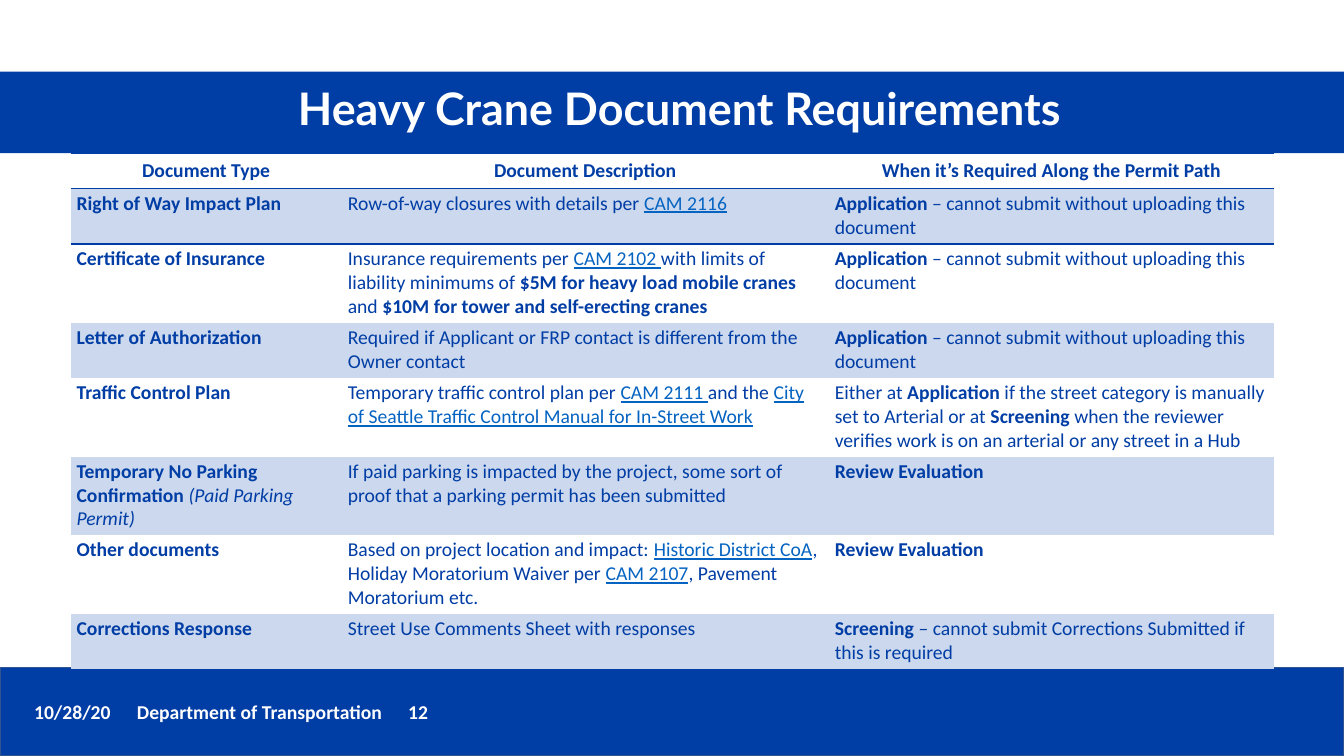
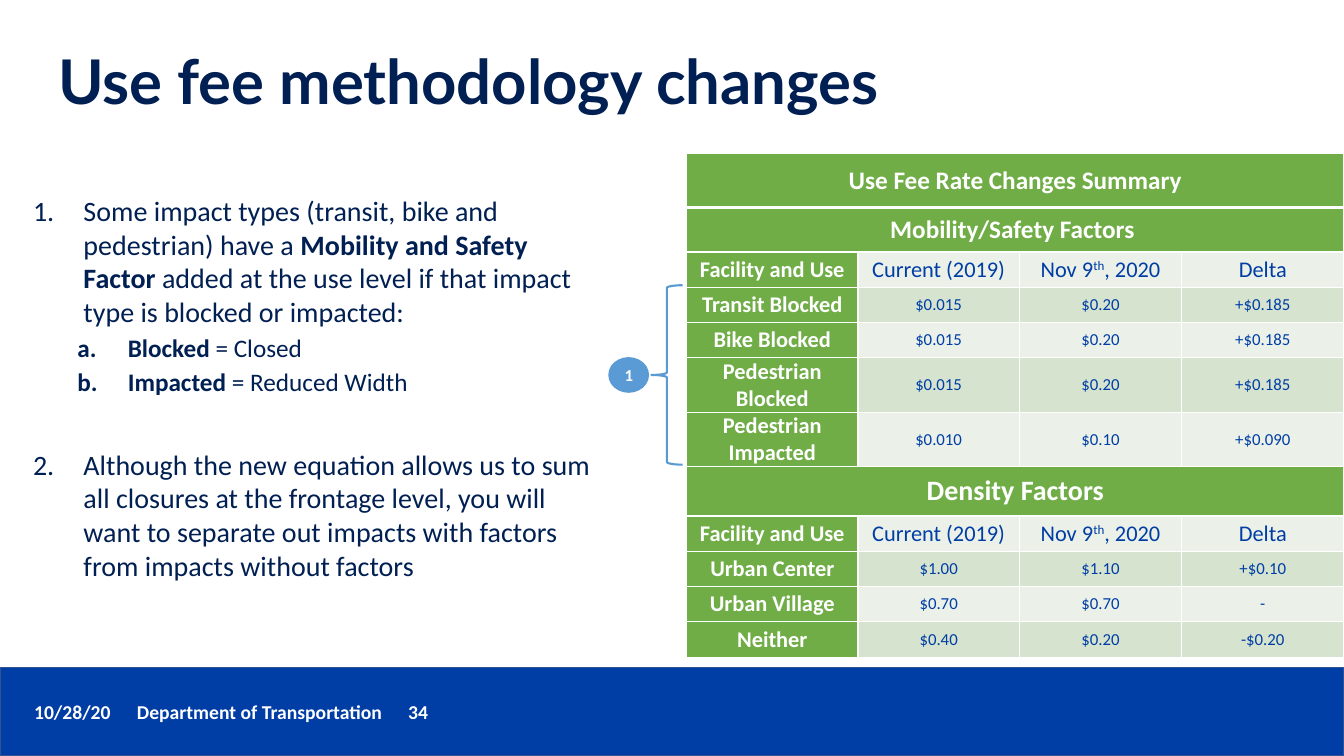
from lxml import etree
from pptx import Presentation
from pptx.dml.color import RGBColor
from pptx.enum.shapes import MSO_SHAPE
from pptx.enum.text import MSO_ANCHOR, PP_ALIGN
from pptx.oxml.ns import qn
from pptx.util import Inches, Pt

CENTER, LEFT = PP_ALIGN.CENTER, PP_ALIGN.LEFT
MIDDLE, TOP = MSO_ANCHOR.MIDDLE, MSO_ANCHOR.TOP
RECTANGLE, LEFT_BRACE = MSO_SHAPE.RECTANGLE, MSO_SHAPE.LEFT_BRACE
CIRCLE = MSO_SHAPE.FLOWCHART_CONNECTOR

WIDTH, HEIGHT = 13.33, 7.5
BLUE, NAVY, WHITE, LINK = "003DA5", "001F52", "FFFFFF", "0563C1"
BAND_EDGE, PALE_BLUE = "31538F", "CCD8ED"
GREEN, LIGHT_GREEN, MID_GREEN = "70AD47", "EBF1E9", "D5E3CF"
MARKER_BLUE = "5B9BD5"
PLAIN_TABLE = "{2D5ABB26-0587-4C30-8999-92F81FD0307C}"
color = RGBColor.from_string


def write(paragraph, pieces, size, ink, bold=False, font="Calibri", align=LEFT):
    """Write a string, or a list of strings and (style, string) pairs.

    Styles: b bold, i italic, link underlined link colour, sup superscript.
    """
    paragraph.alignment = align
    for piece in [pieces] if isinstance(pieces, str) else pieces:
        style, text = ("", piece) if isinstance(piece, str) else piece
        run = paragraph.add_run()
        run.text = text
        look = {"name": font, "size": Pt(size), "bold": bold or style == "b",
                "italic": style == "i", "underline": style == "link"}
        for attribute, value in look.items():
            setattr(run.font, attribute, value)
        run.font.color.rgb = color(LINK if style == "link" else ink)
        if style == "sup":
            run._r.get_or_add_rPr().set("baseline", "30000")


def format_cell(cell, fill, borders, margins, anchor):
    """Borders map a side (L, R, T, B) to a colour and a width in points."""
    properties = cell._tc.get_or_add_tcPr()
    for side in "LRTB":
        if side in borders:
            ink, points = borders[side]
            line = etree.SubElement(properties, qn(f"a:ln{side}"), w=str(Pt(points)))
            solid = etree.SubElement(line, qn("a:solidFill"))
            etree.SubElement(solid, qn("a:srgbClr"), val=ink)
    if fill:
        cell.fill.solid()
        cell.fill.fore_color.rgb = color(fill)
    else:
        cell.fill.background()
    cell.margin_left = cell.margin_right = Inches(margins[0])
    cell.margin_top = cell.margin_bottom = Inches(margins[1])
    cell.vertical_anchor = anchor


deck = Presentation()
deck.slide_width, deck.slide_height = Inches(WIDTH), Inches(HEIGHT)
blank = deck.slide_layouts[6]
documents, fees = deck.slides.add_slide(blank), deck.slides.add_slide(blank)

# Bands, titles and footers
BANDS = [
    (documents, 6.62, 0.88, BAND_EDGE),
    (fees, 6.62, 0.88, BAND_EDGE),
    (documents, 0.71, 0.81, None),
]
for slide, top, height, edge in BANDS:
    band = slide.shapes.add_shape(RECTANGLE, 0, Inches(top), deck.slide_width, Inches(height))
    band.shadow.inherit = False
    band.fill.solid()
    band.fill.fore_color.rgb = color(BLUE)
    if edge:
        band.line.color.rgb = color(edge)
        band.line.width = Pt(1)
    else:
        band.line.fill.background()

FOOTER = "10/28/20\tDepartment of Transportation\t"
LABELS = [
    (documents, (0.61, 0.7, 12.26, 0.81), "Heavy Crane Document Requirements", 32, WHITE, "Lato", CENTER),
    (fees, (0.48, 0.11, 11.5, 1.45), "Use fee methodology changes", 44, NAVY, "Lato", LEFT),
    (documents, (0.24, 6.89, 10.06, 0.34), FOOTER + "12", 14, WHITE, "Calibri", LEFT),
    (fees, (0.24, 6.89, 10.06, 0.34), FOOTER + "34", 14, WHITE, "Calibri", LEFT),
]
for slide, place, text, size, ink, font, align in LABELS:
    frame = slide.shapes.add_textbox(*map(Inches, place)).text_frame
    frame.word_wrap = True
    frame.vertical_anchor = MIDDLE
    label = frame.paragraphs[0]
    write(label, text, size, ink, True, font, align)
    if font == "Lato":
        label.line_spacing = 0.9
    else:
        stops = etree.SubElement(label._p.get_or_add_pPr(), qn("a:tabLst"))
        for position in (1.02, 3.71):
            etree.SubElement(stops, qn("a:tab"), pos=str(Inches(position)), algn="l")

# Table contents
AT_APPLICATION = [("b", "Application"), " – cannot submit without uploading this document"]
REQUIREMENTS = [
    ["Document Type", "Document Description", "When it’s Required Along the Permit Path"],
    [[("b", "Right of Way Impact Plan")],
     ["Row-of-way closures with details per ", ("link", "CAM 2116")],
     AT_APPLICATION],
    [[("b", "Certificate of Insurance")],
     ["Insurance requirements per ", ("link", "CAM 2102 "),
      "with limits of liability minimums of ", ("b", "$5M for heavy load mobile cranes "),
      "and ", ("b", "$10M for tower and self-erecting cranes")],
     AT_APPLICATION],
    [[("b", "Letter of Authorization")],
     "Required if Applicant or FRP contact is different from the Owner contact",
     AT_APPLICATION],
    [[("b", "Traffic Control Plan")],
     ["Temporary traffic control plan per ", ("link", "CAM 2111 "), "and the ",
      ("link", "City of Seattle Traffic Control Manual for In-Street Work")],
     ["Either at ", ("b", "Application"),
      " if the street category is manually set to Arterial or at", ("b", " Screening "),
      "when the reviewer verifies work is on an arterial or any street in a Hub"]],
    [[("b", "Temporary No Parking Confirmation "), ("i", "(Paid Parking Permit)")],
     "If paid parking is impacted by the project, some sort of proof that a parking permit has been submitted",
     [("b", "Review Evaluation")]],
    [[("b", "Other documents")],
     ["Based on project location and impact: ", ("link", "Historic District CoA"),
      ", Holiday Moratorium Waiver per ", ("link", "CAM 2107"), ", Pavement Moratorium etc."],
     [("b", "Review Evaluation")]],
    [[("b", "Corrections Response")],
     "Street Use Comments Sheet with responses",
     [("b", "Screening"), " – cannot submit Corrections Submitted if this is required"]],
]
RATE_HEADINGS = ["Facility and Use", "Current (2019)", ["Nov 9", ("sup", "th"), ", 2020"], "Delta"]
RATES = [
    ["Use Fee Rate Changes Summary"],
    ["Mobility/Safety Factors "],
    RATE_HEADINGS,
    ["Transit Blocked", "$0.015", "$0.20", "+$0.185"],
    ["Bike Blocked", "$0.015", "$0.20", "+$0.185"],
    ["Pedestrian Blocked", "$0.015", "$0.20", "+$0.185"],
    ["Pedestrian Impacted", "$0.010", "$0.10", "+$0.090"],
    ["Density Factors"],
    RATE_HEADINGS,
    ["Urban Center", "$1.00", "$1.10", "+$0.10"],
    ["Urban Village", "$0.70", "$0.70", "-"],
    ["Neither", "$0.40", "$0.20", "-$0.20"],
]
GRIDS = [
    (documents, 0.7, [2.69, 4.83, 4.42], [0.35, 0.55, 0.78, 0.55, 0.78, 0.78, 0.78, 0.55]),
    (fees, 6.81, [1.7, 1.6, 1.61, 1.61], [0.54, 0.44] + [0.35] * 3 + [0.54] * 2 + [0.49] + [0.35] * 4),
]
tables = []
for slide, left, widths, heights in GRIDS:
    table = slide.shapes.add_table(
        len(heights), len(widths), Inches(left), Inches(1.52),
        Inches(sum(widths)), Inches(sum(heights))).table
    table.first_row = table.horz_banding = False
    table._tbl.tblPr.find(qn("a:tableStyleId")).text = PLAIN_TABLE
    for column, width in zip(table.columns, widths):
        column.width = Inches(width)
    for row, height in zip(table.rows, heights):
        row.height = Inches(height)
    tables.append(table)
requirement_table, rate_table = tables

rule = (BLUE, 1)
requirement_rules = {0: {"T": rule, "B": rule}, 1: {"T": rule}, len(REQUIREMENTS) - 1: {"B": rule}}
for r, entries in enumerate(REQUIREMENTS):
    heading = r == 0
    for c, entry in enumerate(entries):
        cell = requirement_table.cell(r, c)
        format_cell(cell, PALE_BLUE if r % 2 else None, requirement_rules.get(r, {}),
                    (0.06, 0.03), MIDDLE if heading else TOP)
        write(cell.text_frame.paragraphs[0], entry, 14, BLUE, heading,
              align=CENTER if heading else LEFT)

last_column = len(RATE_HEADINGS) - 1
for r, entries in enumerate(RATES):
    section = len(entries) == 1
    for c in range(last_column + 1):
        borders = dict.fromkeys("LRTB", (WHITE, 1))
        if r < 2:
            borders["B" if r == 0 else "T"] = (WHITE, 3)
        fill = GREEN if section or c == 0 else MID_GREEN if r % 2 else LIGHT_GREEN
        format_cell(rate_table.cell(r, c), fill, borders, (0.07, 0), MIDDLE)
    if section:
        rate_table.cell(r, 0).merge(rate_table.cell(r, last_column))
    for c, entry in enumerate(entries):
        if section:
            size = 20 if r > 1 else 18
        else:
            size = 16 if c == 0 or entries is RATE_HEADINGS else 12
        write(rate_table.cell(r, c).text_frame.paragraphs[0], entry, size,
              BLUE if c else WHITE, c == 0, align=CENTER)

# Numbered explanation
POINTS = [
    (0, 6, ["Some impact types (transit, bike and pedestrian) have a ",
            ("b", "Mobility and Safety Factor "),
            "added at the use level if that impact type is blocked or impacted:"]),
    (1, 3, [("b", "Blocked"), " = Closed"]),
    (1, 3, [("b", "Impacted"), " = Reduced Width"]),
    (0, 36, "Although the new equation allows us to sum all closures at the frontage level, "
            "you will want to separate out impacts with factors from impacts without factors"),
]
LEVELS = [(20, 0.5, "arabicPeriod"), (18, 0.94, "alphaLcPeriod")]
explanation = fees.shapes.add_textbox(*map(Inches, (0.23, 1.87, 5.77, 4.05))).text_frame
explanation.word_wrap = True
for number, (level, space, pieces) in enumerate(POINTS):
    point = explanation.add_paragraph() if number else explanation.paragraphs[0]
    size, indent, numbering = LEVELS[level]
    point.level = level
    point.space_before = Pt(space)
    write(point, pieces, size, NAVY)
    properties = point._p.get_or_add_pPr()
    properties.set("marL", str(Inches(indent)))
    properties.set("indent", str(Inches(-0.5)))
    etree.SubElement(properties, qn("a:buAutoNum"), type=numbering)

# Marker tying point 1 to the mobility rows
MARKERS = [
    (LEFT_BRACE, (6.46, 2.83, 0.31, 1.78), 1.5, ""),
    (CIRCLE, (6.04, 3.55, 0.39, 0.34), 1, "1"),
]
for kind, place, weight, text in MARKERS:
    marker = fees.shapes.add_shape(kind, *map(Inches, place))
    marker.shadow.inherit = False
    marker.line.color.rgb = color(MARKER_BLUE)
    marker.line.width = Pt(weight)
    if text:
        marker.fill.solid()
        marker.fill.fore_color.rgb = color(MARKER_BLUE)
        marker.text_frame.vertical_anchor = MIDDLE
        write(marker.text_frame.paragraphs[0], text, 12, WHITE, True, align=CENTER)
    else:
        marker.fill.background()

deck.save("out.pptx")
